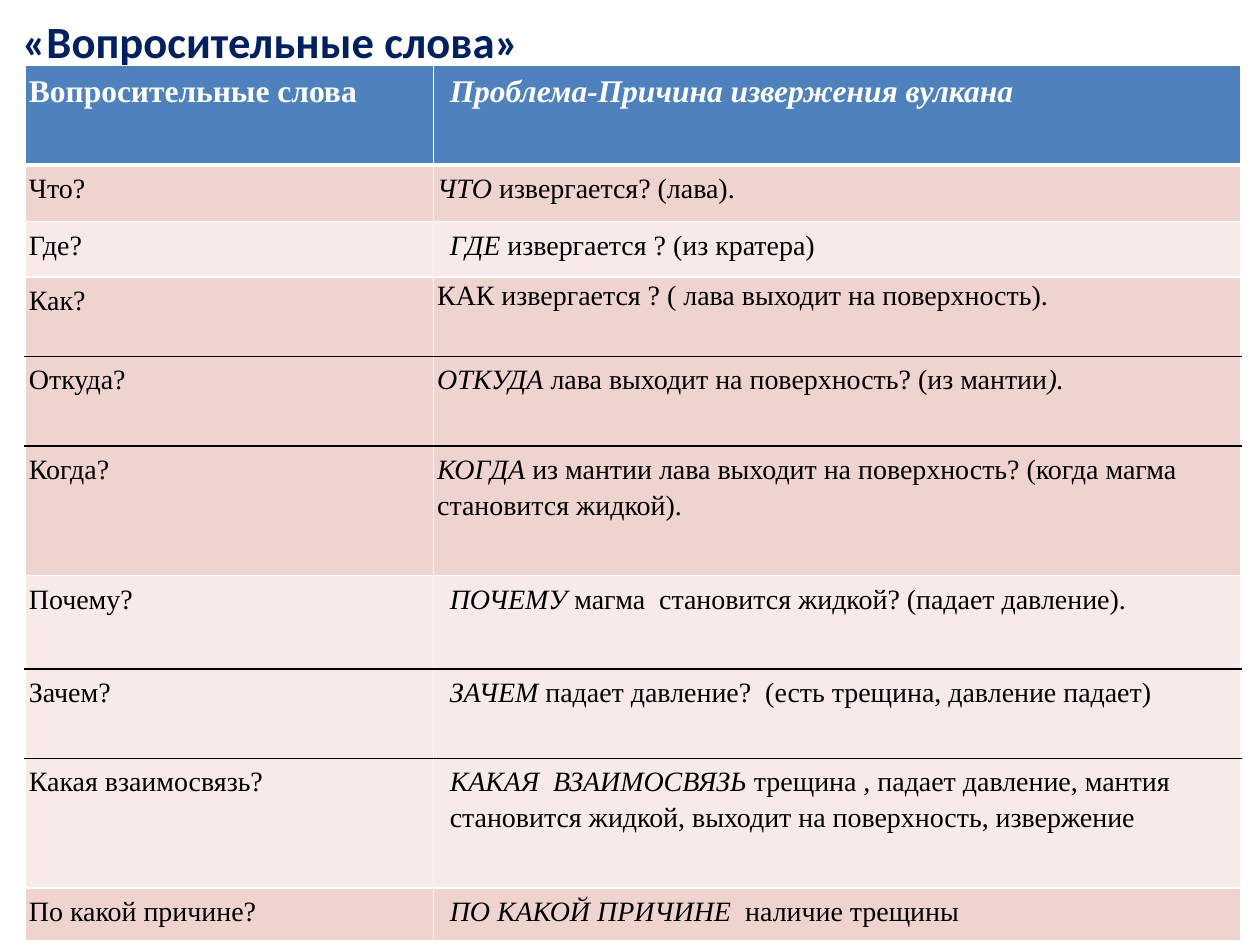
from lxml import etree
from pptx import Presentation
from pptx.dml.color import RGBColor
from pptx.enum.text import MSO_ANCHOR, PP_ALIGN
from pptx.oxml.ns import qn
from pptx.util import Inches, Pt

CENTER, JUSTIFY, LEFT = PP_ALIGN.CENTER, PP_ALIGN.JUSTIFY, PP_ALIGN.LEFT
MIDDLE = MSO_ANCHOR.MIDDLE

NAVY = RGBColor(0x00, 0x20, 0x60)
BLUE = RGBColor(0x4F, 0x81, 0xBD)
ROSE = RGBColor(0xEE, 0xD3, 0xCF)
PALE_ROSE = RGBColor(0xF7, 0xEA, 0xE9)
WHITE = RGBColor(0xFF, 0xFF, 0xFF)
BLACK = RGBColor(0x00, 0x00, 0x00)

HEADER = ("Вопросительные слова", "Проблема-Причина извержения вулкана")
# height, fill, question word, indented answer, answer runs (text, italic), colour of the line below
QUESTIONS = [
    (0.45, ROSE, "Что?", False,
     [("ЧТО ", True), ("извергается? (лава).", False)], WHITE),
    (0.44, PALE_ROSE, "Где?", True,
     [("ГДЕ", True), (" извергается ? (из кратера)", False)], WHITE),
    (0.63, ROSE, "Как?", False,
     [("КАК извергается ? ( лава выходит на поверхность).", False)], BLACK),
    (0.71, ROSE, "Откуда?", False,
     [("ОТКУДА", True), (" лава выходит на поверхность? (из мантии", False), (").", True)], BLACK),
    (1.03, ROSE, "Когда?", False,
     [("КОГДА", True),
      (" из мантии лава выходит на поверхность? (когда магма  становится жидкой).", False)], WHITE),
    (0.74, PALE_ROSE, "Почему?", True,
     [("ПОЧЕМУ ", True), ("магма  становится жидкой? (падает давление).", False)], BLACK),
    (0.71, PALE_ROSE, "Зачем?", True,
     [("ЗАЧЕМ", True), (" падает давление?  (есть трещина, давление падает)", False)], BLACK),
    (1.03, PALE_ROSE, "Какая взаимосвязь?", True,
     [("КАКАЯ  ВЗАИМОСВЯЗЬ", True),
      (" трещина , падает давление, мантия становится жидкой, "
       "выходит на поверхность, извержение", False)], WHITE),
    (0.42, ROSE, "По какой причине?", True,
     [("ПО КАКОЙ ПРИЧИНЕ", True), ("  наличие трещины", False)], WHITE),
]


def add_borders(cell, top, bottom):
    """Draw white sides and the given (colour, points) lines above and below."""
    properties = cell._tc.get_or_add_tcPr()
    side = (WHITE, 1)
    edges = zip(("a:lnL", "a:lnR", "a:lnT", "a:lnB"), (side, side, top, bottom))
    for position, (tag, (colour, points)) in enumerate(edges):
        line = etree.Element(qn(tag), w=str(Pt(points)))
        fill = etree.SubElement(line, qn("a:solidFill"))
        etree.SubElement(fill, qn("a:srgbClr"), val=str(colour))
        properties.insert(position, line)


def fill_cell(cell, runs, fill, size, colour, bold, align, spacing, indent):
    cell.fill.solid()
    cell.fill.fore_color.rgb = fill
    cell.margin_left = cell.margin_right = Inches(0.03)
    cell.margin_top = cell.margin_bottom = Inches(0.03)
    paragraph = cell.text_frame.paragraphs[0]
    paragraph.alignment = align
    paragraph.line_spacing = spacing
    if indent:
        paragraph._p.get_or_add_pPr().set("marL", str(Inches(0.1)))
    for text, italic in runs:
        run = paragraph.add_run()
        run.text = text
        run.font.name = "Times New Roman"
        run.font.size = Pt(size)
        run.font.bold = bold
        run.font.italic = italic
        run.font.color.rgb = colour


prs = Presentation()
prs.slide_width, prs.slide_height = Inches(10), Inches(7.5)
slide = prs.slides.add_slide(prs.slide_layouts[5])

title = slide.shapes.title
title.left, title.top = Inches(0.05), Inches(0.07)
title.width, title.height = Inches(4.2), Inches(0.5)
heading = title.text_frame
heading.word_wrap = False
heading.vertical_anchor = MIDDLE
heading.margin_left = heading.margin_right = 0
heading.margin_top = heading.margin_bottom = 0
heading.paragraphs[0].alignment = CENTER
heading_run = heading.paragraphs[0].add_run()
heading_run.text = "«Вопросительные слова»"
heading_run.font.name = "Calibri"
heading_run.font.size = Pt(25.5)
heading_run.font.bold = True
heading_run.font.color.rgb = NAVY

table = slide.shapes.add_table(
    len(QUESTIONS) + 1, 2, Inches(0.2), Inches(0.52), Inches(9.65), Inches(6.95)).table
table.columns[0].width = Inches(3.24)
table.columns[1].width = Inches(6.41)

table.rows[0].height = Inches(0.79)
line_above = (WHITE, 3)
for column, label in enumerate(HEADER):
    cell = table.cell(0, column)
    fill_cell(cell, [(label, column == 1)], BLUE, 18, WHITE, True, JUSTIFY, 1.15, column == 1)
    add_borders(cell, (WHITE, 1), line_above)

for row, (height, fill, word, indent, answer, line_colour) in enumerate(QUESTIONS, start=1):
    table.rows[row].height = Inches(height)
    line_below = (line_colour, 1)
    word_cell, answer_cell = table.cell(row, 0), table.cell(row, 1)
    answer_spacing = 1.0 if word == "Как?" else 1.15
    fill_cell(word_cell, [(word, False)], fill, 16, BLACK, False, JUSTIFY, 1.15, False)
    fill_cell(answer_cell, answer, fill, 16, BLACK, False, LEFT, answer_spacing, indent)
    for cell in (word_cell, answer_cell):
        add_borders(cell, line_above, line_below)
    line_above = line_below

prs.save("out.pptx")
